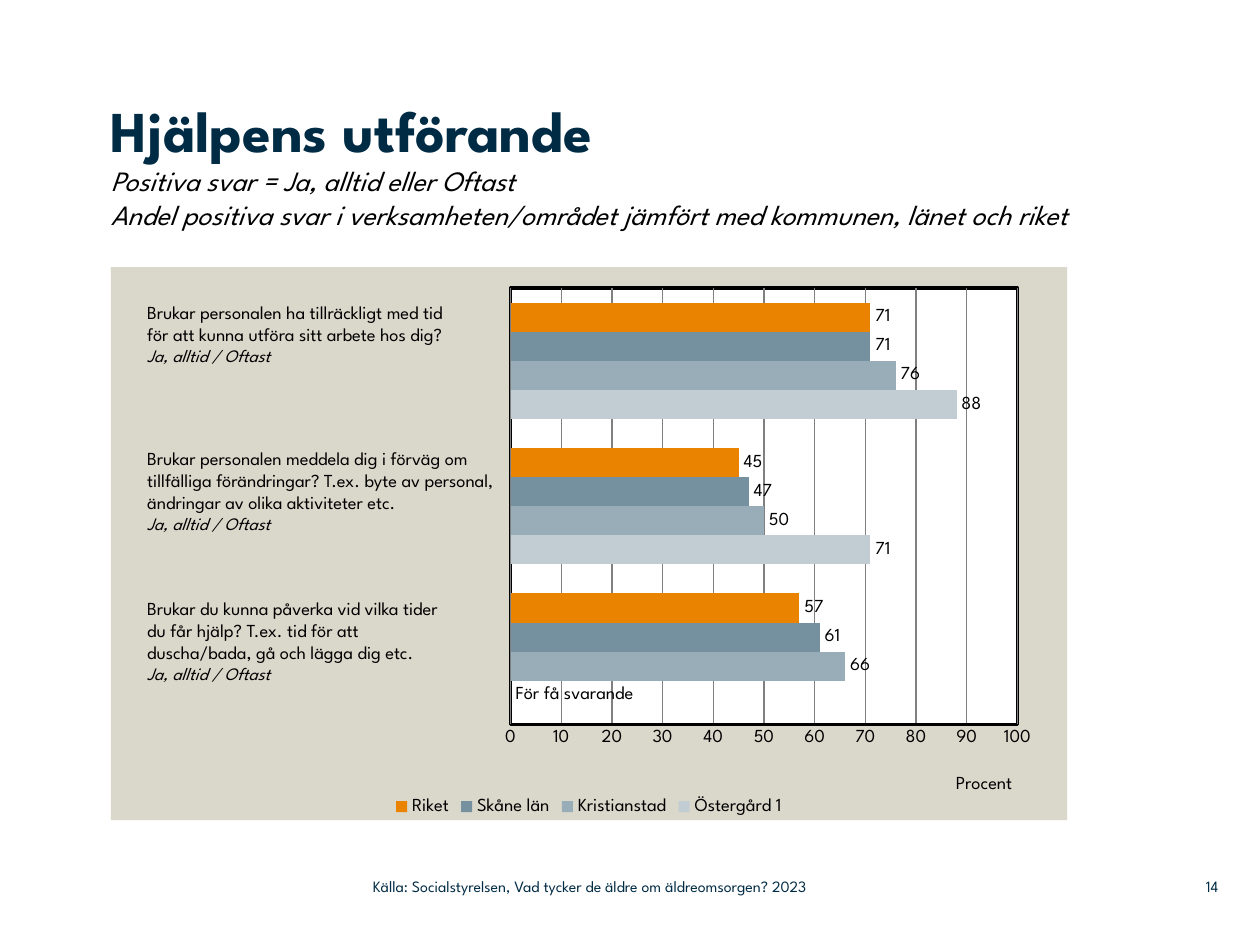
from lxml.etree import SubElement
from pptx import Presentation
from pptx.chart.data import CategoryChartData
from pptx.dml.color import RGBColor
from pptx.enum.chart import XL_CHART_TYPE, XL_LABEL_POSITION, XL_LEGEND_POSITION, XL_TICK_MARK
from pptx.enum.text import MSO_ANCHOR, PP_ALIGN
from pptx.oxml import parse_xml
from pptx.oxml.ns import nsdecls, qn
from pptx.util import Inches, Pt

THEME = {
    "font": "League Spartan",
    "navy": "002B45", "black": "000000", "white": "FFFFFF",
    "panel": "DAD7CB", "grid": "808080",
    "heading": 33, "subtitle": 16, "body": 10.5, "answer": 10, "footer": 9,
}

HEADING = "Hjälpens utförande"
SUBTITLES = [
    "Positiva svar = Ja, alltid eller Oftast",
    "Andel positiva svar i verksamheten/området jämfört med kommunen, länet och riket",
]
ANSWER = "Ja, alltid / Oftast"
QUESTIONS = [  # top, height, lines
    (2.34, 0.81, ["Brukar personalen ha tillräckligt med tid",
                  "för att kunna utföra sitt arbete hos dig?"]),
    (3.5, 0.98, ["Brukar personalen meddela dig i förväg om tillfälliga förändringar? "
                 "T.ex. byte av personal, ändringar av olika aktiviteter etc."]),
    (4.69, 0.81, ["Brukar du kunna påverka vid vilka tider",
                  "du får hjälp? T.ex. tid för att",
                  "duscha/bada, gå och lägga dig etc."]),
]
SERIES = [  # name, values from the bottom group up, colour
    ("Östergård 1", (0, 71, 88), "C2CDD3"),
    ("Kristianstad", (66, 50, 76), "99ADB9"),
    ("Skåne län", (61, 47, 71), "75909F"),
    ("Riket", (57, 45, 71), "E98300"),
]
TOO_FEW = "För få svarande"
AXIS_TITLE = "Procent"
SOURCE = "Källa: Socialstyrelsen, Vad tycker de äldre om äldreomsorgen? 2023"
PAGE_NUMBER = "14"


def color(name):
    return RGBColor.from_string(THEME.get(name, name))


def style(font, size="body", fill="black", **flags):
    values = {"name": THEME["font"], "size": Pt(THEME[size]),
              "bold": False, "italic": False, **flags}
    for key, value in values.items():
        setattr(font, key, value)
    font.color.rgb = color(fill)


def add_text(page, place, lines, inset=True, anchor=MSO_ANCHOR.TOP, align=PP_ALIGN.LEFT):
    """Add a box with one paragraph per (text, format) pair."""
    box = page.shapes.add_textbox(*map(Inches, place))
    frame = box.text_frame
    frame.word_wrap = True
    frame.vertical_anchor = anchor
    if not inset:
        for side in ("left", "top", "right", "bottom"):
            setattr(frame, f"margin_{side}", 0)
    for index, (text, look) in enumerate(lines):
        para = frame.add_paragraph() if index else frame.paragraphs[0]
        para.alignment = align
        span = para.add_run()
        span.text = text
        style(span.font, **look)


def set_layout(parent, before, **values):
    """Give a chart part a manual layout, placed ahead of the first tag found in before."""
    for old in parent.findall(qn("c:layout")):
        parent.remove(old)
    layout = parse_xml(f"<c:layout {nsdecls('c')}/>")
    manual = SubElement(layout, qn("c:manualLayout"))
    for tag, value in values.items():
        SubElement(manual, qn(f"c:{tag}")).set("val", str(value))
    following = next(child for child in parent if child.tag in map(qn, before))
    following.addprevious(layout)


def fill_area(parent, fill, line, before=None):
    """Set the fill and outline of the chart space or plot area."""
    outline = (f'<a:ln w="{Pt(2)}"><a:solidFill><a:srgbClr val="{THEME[line]}"/></a:solidFill></a:ln>'
               if line else "<a:ln><a:noFill/></a:ln>")
    shape = parse_xml(f'<c:spPr {nsdecls("c", "a")}><a:solidFill>'
                      f'<a:srgbClr val="{THEME[fill]}"/></a:solidFill>{outline}</c:spPr>')
    if before is None:
        parent.append(shape)
    else:
        parent.find(qn(before)).addprevious(shape)


def add_bar_chart(page):
    data = CategoryChartData()
    data.categories = ["1", "2", "3"]
    for name, values, _ in SERIES:
        data.add_series(name, values)
    chart = page.shapes.add_chart(
        XL_CHART_TYPE.BAR_CLUSTERED, *map(Inches, (0.88, 2.12, 7.59, 4.39)), data).chart
    style(chart.font)
    chart.has_title = False
    chart.has_legend = True
    chart.legend.position = XL_LEGEND_POSITION.BOTTOM
    chart.legend.include_in_layout = False
    style(chart.legend.font)

    plot = chart.plots[0]
    plot.gap_width, plot.overlap, plot.vary_by_categories = 100, 0, False
    for series, (_, _, fill) in zip(plot.series, SERIES):
        series.format.fill.solid()
        series.format.fill.fore_color.rgb = color(fill)
        labels = series.data_labels
        labels.show_value = True
        labels.position = XL_LABEL_POSITION.OUTSIDE_END
        style(labels.font)
    label = plot.series[0].points[0].data_label
    span = label.text_frame.paragraphs[0].add_run()
    span.text = TOO_FEW
    style(span.font)
    label.position = XL_LABEL_POSITION.OUTSIDE_END

    chart.category_axis.visible = False
    axis = chart.value_axis
    axis.minimum_scale, axis.maximum_scale, axis.major_unit = 0, 100, 10
    axis.major_tick_mark = axis.minor_tick_mark = XL_TICK_MARK.NONE
    style(axis.tick_labels.font)
    axis.has_major_gridlines = True
    for line, width, fill in ((axis.format.line, 2, "black"),
                              (axis.major_gridlines.format.line, 0.75, "grid")):
        line.width = Pt(width)
        line.color.rgb = color(fill)
    title = axis.axis_title
    span = title.text_frame.paragraphs[0].add_run()
    span.text = AXIS_TITLE
    style(span.font)
    set_layout(title._element, ["c:overlay"], xMode="edge", yMode="edge", x=0.88, y=0.91)

    space = chart._chartSpace
    area = space.find(qn("c:chart")).find(qn("c:plotArea"))
    set_layout(area, ["c:barChart"], layoutTarget="inner", xMode="edge", yMode="edge",
               x=0.418, y=0.038, w=0.53, h=0.789)
    fill_area(area, "white", "black")
    fill_area(space, "panel", None, before="c:txPr")


def main():
    deck = Presentation()
    deck.slide_width, deck.slide_height = Inches(10), Inches(7.5)
    page = deck.slides.add_slide(deck.slide_layouts[6])

    add_bar_chart(page)
    heading = [(HEADING, {"size": "heading", "fill": "navy", "bold": True})]
    subtitles = [(text, {"size": "subtitle", "italic": True}) for text in SUBTITLES]
    add_text(page, (0.88, 0.75, 7.79, 1.21), heading + subtitles, inset=False)
    for top, height, lines in QUESTIONS:
        content = [(text, {}) for text in lines]
        content.append((ANSWER, {"size": "answer", "italic": True}))
        add_text(page, (1.07, top, 2.99, height), content)
    for left, width, text, align in ((9.2, 0.47, PAGE_NUMBER, PP_ALIGN.RIGHT),
                                     (2.96, 4.43, SOURCE, PP_ALIGN.LEFT)):
        add_text(page, (left, 6.89, width, 0.29), [(text, {"size": "footer", "fill": "navy"})],
                 inset=False, anchor=MSO_ANCHOR.MIDDLE, align=align)
    deck.save("out.pptx")


if __name__ == "__main__":
    main()
